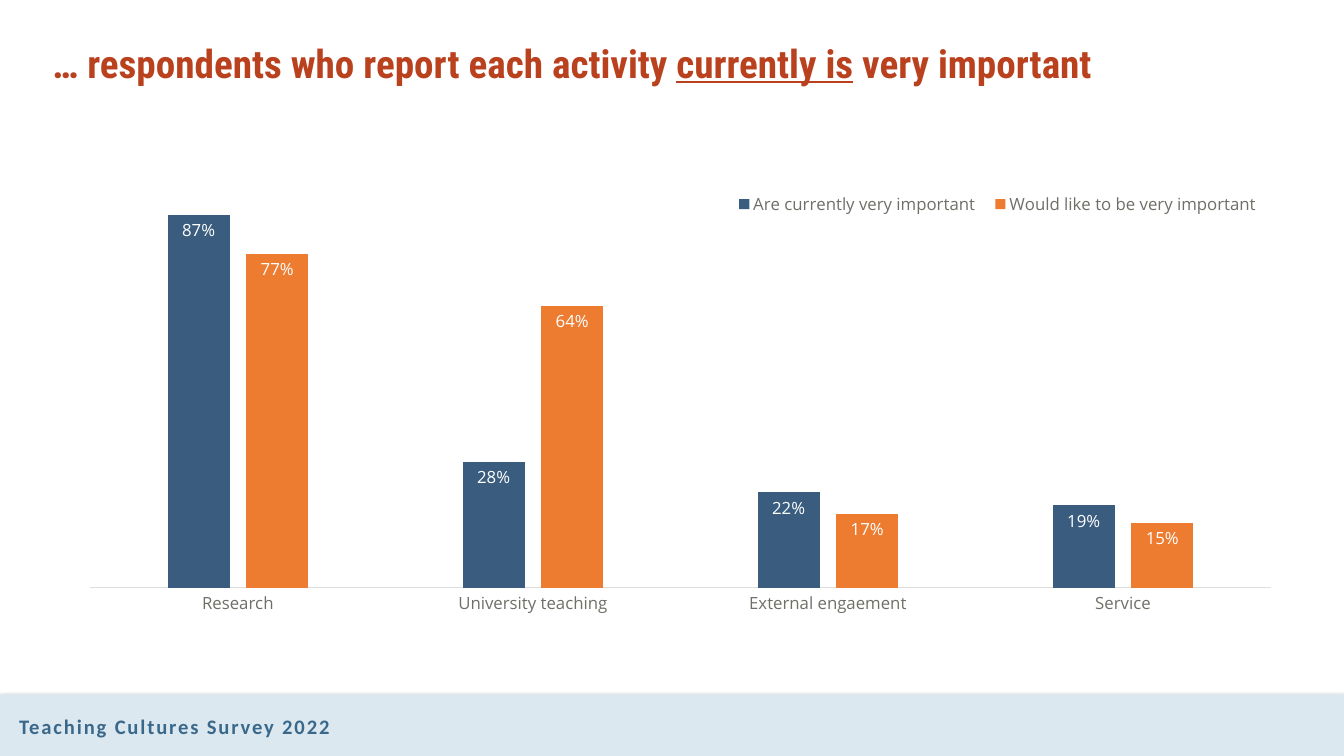
from lxml import etree
from pptx import Presentation
from pptx.chart.data import CategoryChartData
from pptx.dml.color import RGBColor
from pptx.enum.chart import (XL_CHART_TYPE, XL_LABEL_POSITION,
                             XL_LEGEND_POSITION, XL_TICK_MARK)
from pptx.enum.shapes import MSO_SHAPE
from pptx.enum.text import MSO_ANCHOR
from pptx.oxml import parse_xml
from pptx.oxml.ns import nsdecls, qn
from pptx.util import Cm, Pt

COLUMN = XL_CHART_TYPE.COLUMN_CLUSTERED
IN_END = XL_LABEL_POSITION.INSIDE_END
RIGHT = XL_LEGEND_POSITION.RIGHT
NO_TICK = XL_TICK_MARK.NONE
RECT = MSO_SHAPE.RECTANGLE
TOP = MSO_ANCHOR.TOP

# Content
TITLE = [("… respondents who report each activity ", False),
         ("currently is", True),
         (" very important", False)]
FOOTER = "Teaching Cultures Survey 2022"
CATS = ["Research", "University teaching", "External engaement", "Service"]
# name, colour, values, labels that differ from the rounded value
SERIES = [
    ("Are currently very important", "blue",
     [0.86, 0.29, 0.22, 0.19], {0: "87%", 1: "28%"}),
    ("Would like to be very important", "orange",
     [0.77, 0.65, 0.17, 0.15], {1: "64%"}),
]
COLORS = {"blue": "3A5C7F", "orange": "ED7C31", "title": "BA411E",
          "band": "DCE8F0", "footer": "3A688B", "text": "1D1D1B",
          "grey": "6F6F68", "axis": "DEDEDC", "white": "FFFFFF"}

# Layout: slide in cm, chart parts as fractions of the chart
WIDTH, HEIGHT, BAND = 33.87, 19.05, 1.55
PLOT = {"x": 0.03, "y": 0.05, "w": 0.93, "h": 0.78}
LEGEND = {"x": 0.53, "y": 0.11, "w": 0.43, "h": 0.06}


def rgb(key):
    return RGBColor.from_string(COLORS[key])


def style(font, size, face, color, bold=False):
    font.size, font.name, font.bold = Pt(size), face, bold
    font.color.rgb = rgb(color)


def label_font(font, color):
    style(font, 12, "Open Sans", color)


def add_text(slide, box, text):
    shape = slide.shapes.add_textbox(*map(Cm, box))
    frame = shape.text_frame
    frame.word_wrap = True
    frame.vertical_anchor = TOP
    frame.margin_left = frame.margin_right = 0
    frame.margin_top = frame.margin_bottom = 0
    frame.text = text
    return shape


def set_layout(root, index, box, inner=False):
    for old in root.findall(qn("c:layout")):
        root.remove(old)
    target = '<c:layoutTarget val="inner"/>' if inner else ""
    modes = "".join(f'<c:{k}Mode val="edge"/>' for k in "xy")
    sizes = "".join(f'<c:{k} val="{v}"/>' for k, v in box.items())
    root.insert(index, parse_xml(
        f'<c:layout {nsdecls("c")}><c:manualLayout>{target}'
        f'{modes}{sizes}</c:manualLayout></c:layout>'))


def add_band(slide):
    band = slide.shapes.add_shape(RECT, 0, Cm(HEIGHT - BAND),
                                  Cm(WIDTH), Cm(BAND))
    band.fill.solid()
    band.fill.fore_color.rgb = rgb("band")
    band.line.fill.background()
    band.shadow.inherit = False
    effects = band.element.spPr.find(qn("a:effectLst"))
    shade = etree.SubElement(effects, qn("a:outerShdw"), blurRad=str(Pt(3.1)),
                             dist=str(Pt(1.8)), dir="5400000", rotWithShape="0")
    black = etree.SubElement(shade, qn("a:srgbClr"), val="000000")
    etree.SubElement(black, qn("a:alpha"), val="35000")


def add_bars(slide):
    data = CategoryChartData(number_format="0%")
    data.categories = CATS
    for name, _, vals, _ in SERIES:
        data.add_series(name, vals)
    chart = slide.shapes.add_chart(COLUMN, Cm(1.32), Cm(3.18), Cm(31.98),
                                   Cm(14.02), data).chart
    label_font(chart.font, "text")
    chart.has_title = False

    # Axes
    cat, val = chart.category_axis, chart.value_axis
    cat.major_tick_mark = cat.minor_tick_mark = NO_TICK
    cat.format.line.color.rgb = rgb("axis")
    cat.format.line.width = Pt(0.75)
    label_font(cat.tick_labels.font, "grey")
    val.minimum_scale, val.maximum_scale = 0, 1
    val.has_major_gridlines = False
    val.visible = False

    # Columns and their labels
    plot = chart.plots[0]
    plot.vary_by_categories = False
    plot.gap_width, plot.overlap = 250, -27
    for bars, (_, color, _, notes) in zip(plot.series, SERIES):
        bars.format.fill.solid()
        bars.format.fill.fore_color.rgb = rgb(color)
        labels = bars.data_labels
        labels.show_value = True
        labels.number_format, labels.number_format_is_linked = "0%", False
        labels.position = IN_END
        label_font(labels.font, "white")
        for index, text in notes.items():
            label = bars.points[index].data_label
            label.text_frame.text = text
            label_font(label.text_frame.paragraphs[0].runs[0].font, "white")
            label.position = IN_END

    # Legend and plot placement
    chart.has_legend = True
    legend = chart.legend
    legend.position = RIGHT
    legend.include_in_layout = False
    label_font(legend.font, "grey")
    body = chart.element.find(qn("c:chart"))
    set_layout(body.find(qn("c:plotArea")), 0, PLOT, inner=True)
    set_layout(body.find(qn("c:legend")), 1, LEGEND)


def main():
    deck = Presentation()
    deck.slide_width, deck.slide_height = Cm(WIDTH), Cm(HEIGHT)
    slide = deck.slides.add_slide(deck.slide_layouts[6])

    # Footer
    add_band(slide)
    foot = add_text(slide, (0.48, 18, 21.13, 0.64), FOOTER)
    run = foot.text_frame.paragraphs[0].runs[0]
    style(run.font, 14.7, "Calibri", "footer", True)
    foot.element.find(".//" + qn("a:rPr")).set("spc", "130")

    # Title
    head = add_text(slide, (1.32, 0.99, 30.35, 3.2),
                    "".join(text for text, _ in TITLE))
    line = head.text_frame.paragraphs[0]
    line.clear()
    for text, under in TITLE:
        run = line.add_run()
        run.text = text
        style(run.font, 28, "Roboto Condensed", "title", True)
        run.font.underline = under

    add_bars(slide)
    deck.save("out.pptx")


if __name__ == "__main__":
    main()
